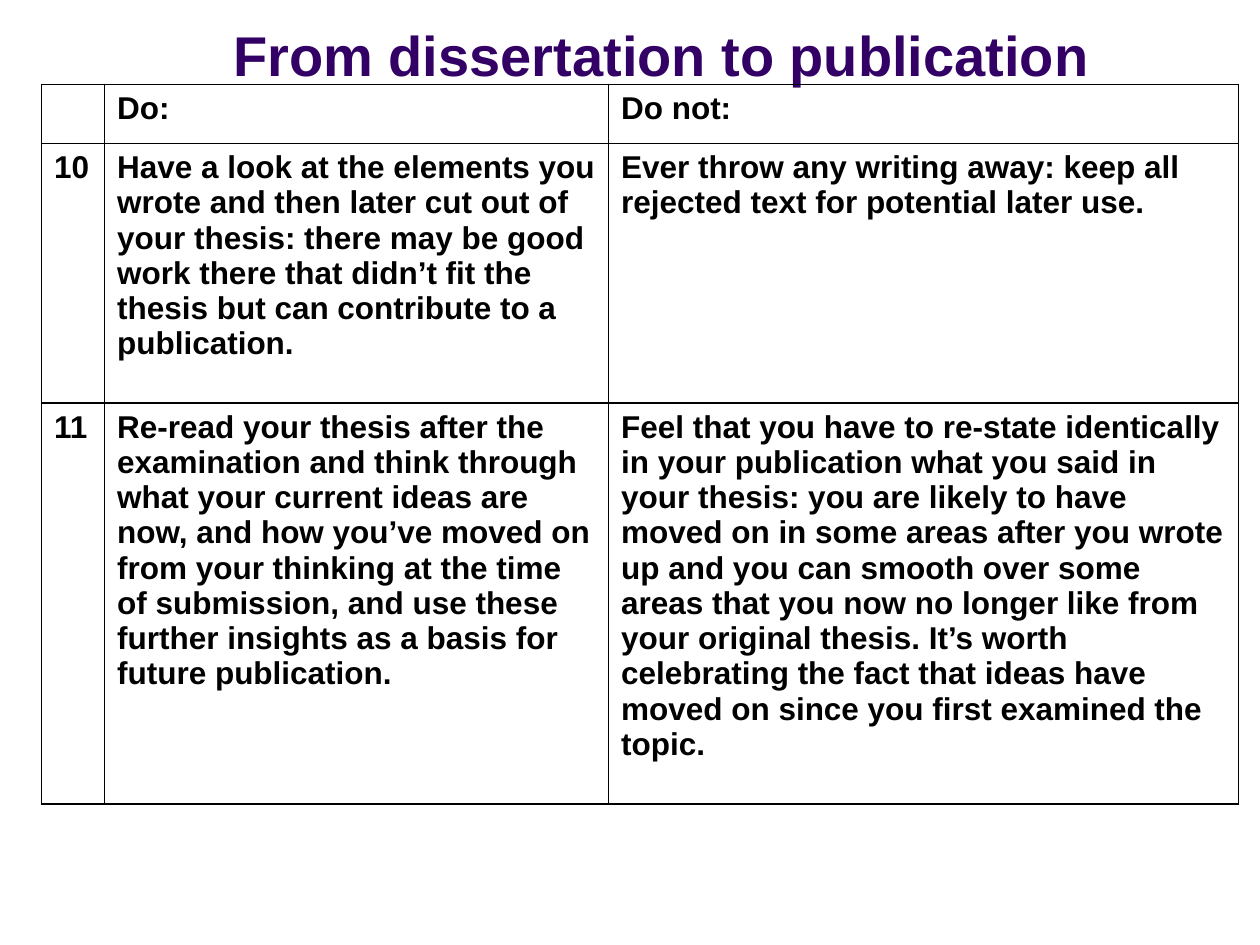
from pptx import Presentation
from pptx.dml.color import RGBColor
from pptx.enum.text import MSO_ANCHOR, PP_ALIGN
from pptx.oxml import parse_xml
from pptx.oxml.ns import nsdecls
from pptx.util import Inches, Pt

WIDTH, HEIGHT = 10, 7.5
INK, HEADING = "000000", "330066"

ADVICE = [
    ("", "Do:", "Do not:"),
    ("10",
     "Have a look at the elements you wrote and then later cut out of your thesis: "
     "there may be good work there that didn’t fit the thesis but can contribute to "
     "a publication.",
     "Ever throw any writing away: keep all rejected text for potential later use."),
    ("11",
     "Re-read your thesis after the examination and think through what your current "
     "ideas are now, and how you’ve moved on from your thinking at the time of "
     "submission, and use these further insights as a basis for future publication.",
     "Feel that you have to re-state identically in your publication what you said in "
     "your thesis: you are likely to have moved on in some areas after you wrote up and "
     "you can smooth over some areas that you now no longer like from your original "
     "thesis. It’s worth celebrating the fact that ideas have moved on since you first "
     "examined the topic."),
]
COLUMN_SHARES = (0.5, 4, 5)
ROW_SHARES = (0.47, 2.06, 3.18)


def colour(hex_string):
    return RGBColor.from_string(hex_string)


def write(frame, text, size, hex_string, align=PP_ALIGN.LEFT):
    frame.text = text
    paragraph = frame.paragraphs[0]
    paragraph.alignment = align
    for attribute, value in {"name": "Arial", "size": Pt(size), "bold": True}.items():
        setattr(paragraph.font, attribute, value)
    paragraph.font.color.rgb = colour(hex_string)


def border(cell, hex_string, points):
    properties = cell._tc.get_or_add_tcPr()
    for position, side in enumerate(("lnL", "lnR", "lnT", "lnB")):
        properties.insert(position, parse_xml(
            f'<a:{side} {nsdecls("a")} w="{Pt(points)}"><a:solidFill>'
            f'<a:srgbClr val="{hex_string}"/></a:solidFill></a:{side}>'))


def place_title(slide, box):
    title = slide.shapes.title
    for attribute, value in zip(("left", "top", "width", "height"), box):
        setattr(title, attribute, Inches(value))
    frame = title.text_frame
    write(frame, "From dissertation to publication", 32, HEADING, PP_ALIGN.RIGHT)
    frame.vertical_anchor = MSO_ANCHOR.BOTTOM
    frame.word_wrap = True


def place_advice(slide, box):
    table = slide.shapes.add_table(
        len(ADVICE), len(COLUMN_SHARES), *map(Inches, box)).table
    table.first_row = table.horz_banding = False
    _, _, width, height = box

    # Column and row grid
    for column, share in zip(table.columns, COLUMN_SHARES):
        column.width = Inches(width * share / sum(COLUMN_SHARES))
    for row, share in zip(table.rows, ROW_SHARES):
        row.height = Inches(height * share / sum(ROW_SHARES))

    # Cell contents
    for row, texts in zip(table.rows, ADVICE):
        for cell, text in zip(row.cells, texts):
            cell.fill.background()
            border(cell, INK, 1)
            write(cell.text_frame, text, 18, INK)


def main():
    deck = Presentation()
    deck.slide_width, deck.slide_height = Inches(WIDTH), Inches(HEIGHT)
    slide = deck.slides.add_slide(deck.slide_layouts[5])
    place_title(slide, (0.05 * WIDTH, 0.17, 0.825 * WIDTH, 0.58))
    place_advice(slide, (0.33, 0.67, 0.95 * WIDTH, sum(ROW_SHARES)))
    deck.save("out.pptx")


if __name__ == "__main__":
    main()
